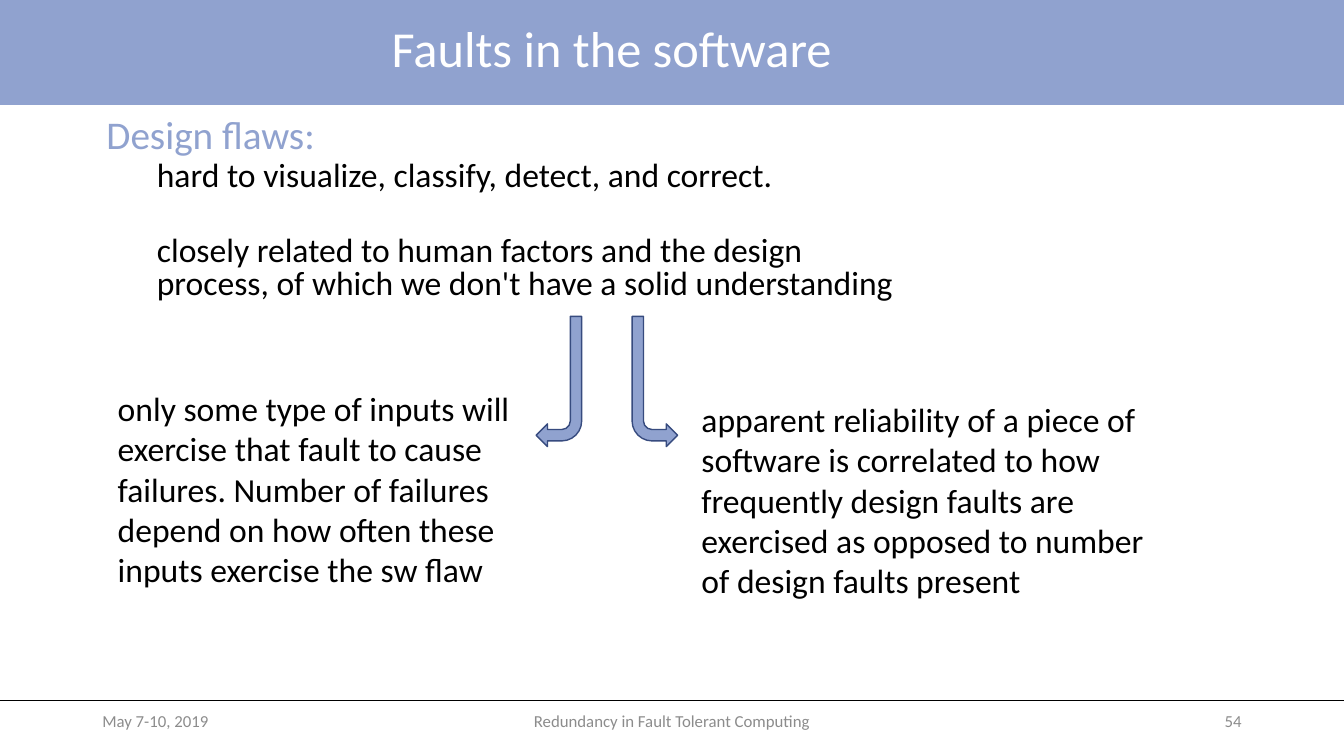
import pptx
import pptx.dml.color
import pptx.enum.shapes
import pptx.enum.text
import pptx.util
from lxml import etree

Pt = pptx.util.Pt
SHAPE = pptx.enum.shapes.MSO_SHAPE
ALIGN = pptx.enum.text.PP_ALIGN
ANCHOR = pptx.enum.text.MSO_ANCHOR

BLUE, NAVY, BLACK, WHITE, GRAY = "90A2CF", "374B7F", "000000", "FFFFFF", "8C8C8C"


def rgb(value):
    return pptx.dml.color.RGBColor.from_string(value)


def add_text(tf, text, first=True, size=24, color=BLACK, font="Calibri",
             align=ALIGN.LEFT, spacing=1.0, before=0, indent=0):
    p = tf.paragraphs[0] if first else tf.add_paragraph()
    p.text = text
    p.alignment = align
    p.line_spacing = spacing
    p.space_before = Pt(before)
    if indent:
        p._p.get_or_add_pPr().set("marL", str(Pt(indent)))
    for r in p.runs:
        r.font.name = font
        r.font.size = Pt(size)
        r.font.color.rgb = rgb(color)


class Deck:
    def __init__(self, width, height):
        self.prs = pptx.Presentation()
        self.prs.slide_width = Pt(width)
        self.prs.slide_height = Pt(height)
        self.s = self.prs.slides.add_slide(self.prs.slide_layouts[6])

    def box(self, x, y, w, h, anchor=ANCHOR.TOP):
        tf = self.s.shapes.add_textbox(Pt(x), Pt(y), Pt(w), Pt(h)).text_frame
        tf.word_wrap = True
        tf.vertical_anchor = anchor
        return tf

    def shape(self, kind, x, y, w, h, line=None):
        sp = self.s.shapes.add_shape(kind, Pt(x), Pt(y), Pt(w), Pt(h))
        sp.shadow.inherit = False
        sp.fill.solid()
        sp.fill.fore_color.rgb = rgb(BLUE)
        if line:
            sp.line.color.rgb = rgb(line)
            sp.line.width = Pt(1)
        else:
            sp.line.fill.background()
        return sp

    def bent_arrow(self, x, y, w, h, to_left):
        sp = self.shape(SHAPE.BENT_ARROW, x, y, w, h, line=NAVY)
        xfrm = sp._element.spPr.xfrm
        xfrm.set("flipV", "1")
        if to_left:
            xfrm.set("flipH", "1")

    def rule(self, x1, y1, x2, y2):
        c = self.s.shapes.add_connector(
            pptx.enum.shapes.MSO_CONNECTOR.STRAIGHT, Pt(x1), Pt(y1), Pt(x2), Pt(y2))
        c.line.color.rgb = rgb(BLACK)
        c.line.width = Pt(0.5)
        etree.SubElement(c._element.spPr, pptx.oxml.ns.qn("a:effectLst"))


def main():
    deck = Deck(960, 540)

    # Title band and footer rule
    deck.shape(SHAPE.RECTANGLE, 0, 0, 960, 75)
    deck.rule(0, 500.4, 960, 500.4)
    add_text(deck.box(0, 0, 874, 73.5, ANCHOR.MIDDLE), "Faults in the software",
             size=36, color=WHITE, align=ALIGN.CENTER, spacing=0.9)

    # Design flaws
    tf = deck.box(69, 81.5, 828, 150)
    add_text(tf, "Design flaws:", size=28, color=BLUE, spacing=0.8)
    add_text(tf, "hard to visualize, classify, detect, and correct.",
             first=False, spacing=0.8, before=3.8, indent=36)
    add_text(tf, "closely related to human factors and the design\v"
             "process, of which we don't have a solid understanding",
             first=False, spacing=0.8, before=30.5, indent=36)

    # Two consequences with their arrows
    add_text(deck.box(54.5, 273.5, 324, 181.5),
             "only some type of inputs will exercise that fault to cause failures. "
             "Number of failures depend on how often these inputs exercise the sw flaw",
             indent=22.5)
    add_text(deck.box(494, 281.5, 338, 152.5),
             "apparent reliability of a piece of software is correlated to how "
             "frequently design faults are exercised as opposed to number of "
             "design faults present")
    for x, to_left in ((383, True), (451.5, False)):
        deck.bent_arrow(x, 226, 32.5, 93, to_left)

    # Footer
    for x, w, text, align in (
            (66, 216, "May 7-10, 2019", ALIGN.LEFT),
            (318, 324, "Redundancy in Fault Tolerant Computing", ALIGN.CENTER),
            (678, 216, "54", ALIGN.RIGHT)):
        add_text(deck.box(x, 500.5, w, 29, ANCHOR.MIDDLE), text,
                 size=12, color=GRAY, align=align)

    deck.prs.save("out.pptx")


if __name__ == "__main__":
    main()
